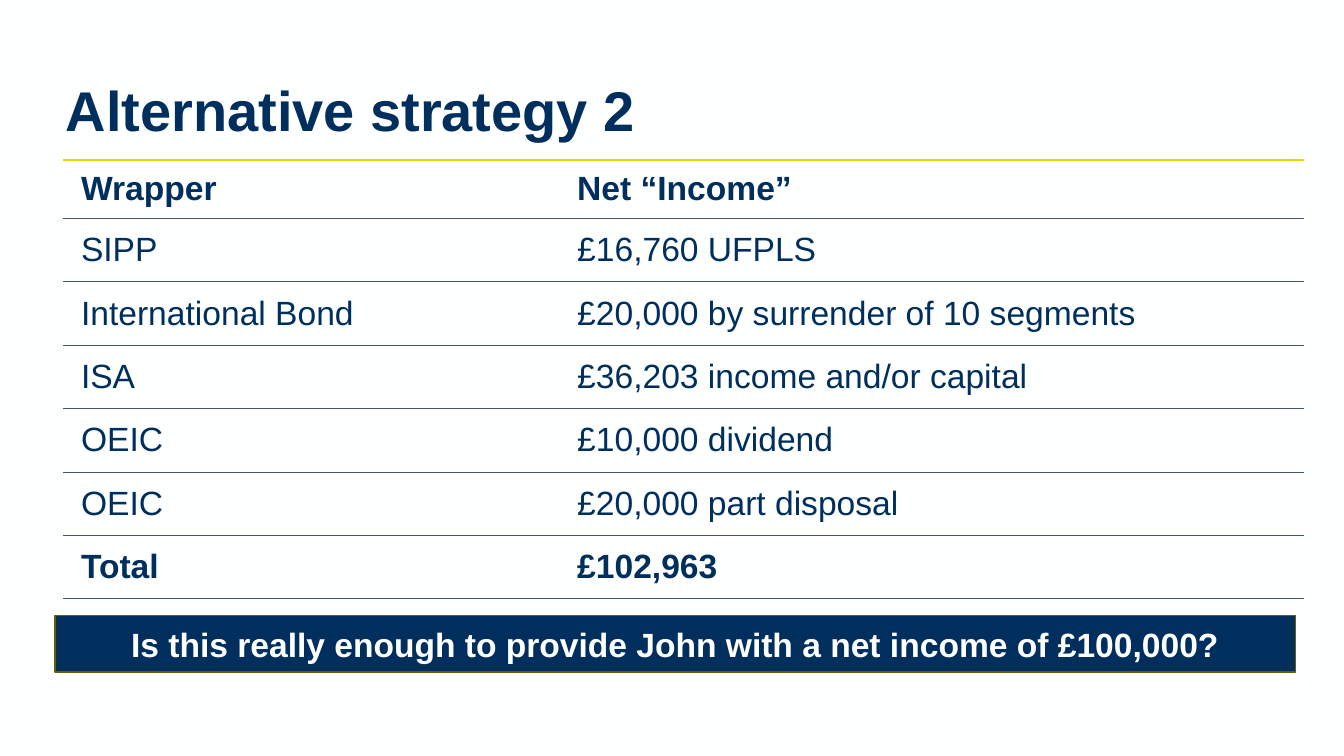
from lxml import etree
from pptx import Presentation
from pptx.dml.color import RGBColor
from pptx.enum.shapes import MSO_SHAPE
from pptx.enum.text import MSO_ANCHOR, PP_ALIGN
from pptx.oxml.ns import qn
from pptx.util import Inches, Pt

RECT = MSO_SHAPE.RECTANGLE
MIDDLE = MSO_ANCHOR.MIDDLE
LEFT, CENTER = PP_ALIGN.LEFT, PP_ALIGN.CENTER

NAVY, SLATE, YELLOW, OLIVE, WHITE = "002F5E", "44546A", "E8D600", "665E00", "FEFFFF"

# Grid: width in inches, row heights in points
CONTENT_W = 9.23
COLUMN_SHARES = (0.4, 0.6)
HEADER_H, ROW_H = 30, 34

ROWS = [
    ("Wrapper", "Net “Income”"),
    ("SIPP", "£16,760 UFPLS"),
    ("International Bond", "£20,000 by surrender of 10 segments"),
    ("ISA", "£36,203 income and/or capital"),
    ("OEIC", "£10,000 dividend"),
    ("OEIC", "£20,000 part disposal"),
    ("Total", "£102,963"),
]


def rgb(value):
    return RGBColor.from_string(value)


def set_text(tf, text, size=18, color=NAVY, bold=True, align=LEFT):
    tf.word_wrap = True
    p = tf.paragraphs[0]
    p.alignment = align
    r = p.add_run()
    r.text = text
    for name, value in {"name": "Arial", "size": Pt(size), "bold": bold}.items():
        setattr(r.font, name, value)
    r.font.color.rgb = rgb(color)
    return p


def set_border(cell, side, color=None, width=0):
    tc_pr = cell._tc.get_or_add_tcPr()
    ln = etree.SubElement(tc_pr, qn(f"a:ln{side}"), w=str(int(Pt(width))))
    if color is None:
        etree.SubElement(ln, qn("a:noFill"))
    else:
        fill = etree.SubElement(ln, qn("a:solidFill"))
        etree.SubElement(fill, qn("a:srgbClr"), val=color)


def add_title(s, text):
    sp = s.shapes.add_textbox(Inches(0.39), Inches(0.3), Inches(9.31), Inches(1.09))
    sp.text_frame.vertical_anchor = MIDDLE
    p = set_text(sp.text_frame, text, size=30)
    p.line_spacing = Pt(31)


def add_income_table(s, rows):
    last = len(rows) - 1
    height = HEADER_H + last * ROW_H
    table = s.shapes.add_table(len(rows), len(COLUMN_SHARES), Inches(0.47), Inches(1.19),
                               Inches(CONTENT_W), Pt(height)).table
    table.first_row = table.horz_banding = False
    for column, share in zip(table.columns, COLUMN_SHARES):
        column.width = Inches(CONTENT_W * share)

    cell_format = {"vertical_anchor": MIDDLE, "margin_left": Pt(9.6), "margin_right": Pt(9.6),
                   "margin_top": Pt(4.8), "margin_bottom": Pt(4.8)}
    for i, texts in enumerate(rows):
        table.rows[i].height = Pt(ROW_H if i else HEADER_H)
        top = (SLATE, 0.25) if i else (YELLOW, 1)
        bottom = (SLATE, 0.5 if i == last else 0.25)
        for j, text in enumerate(texts):
            cell = table.cell(i, j)
            for name, value in cell_format.items():
                setattr(cell, name, value)
            set_text(cell.text_frame, text, bold=i in (0, last))
            set_border(cell, "L")
            set_border(cell, "R")
            set_border(cell, "T", *top)
            set_border(cell, "B", *bottom)
            cell.fill.background()


def add_banner(s, text):
    sp = s.shapes.add_shape(RECT, Inches(0.41), Inches(4.58), Inches(CONTENT_W), Inches(0.42))
    sp.shadow.inherit = False
    sp.fill.solid()
    sp.fill.fore_color.rgb = rgb(NAVY)
    sp.line.color.rgb = rgb(OLIVE)
    sp.line.width = Pt(1)
    sp.text_frame.vertical_anchor = MIDDLE
    set_text(sp.text_frame, text, color=WHITE, align=CENTER)


def main():
    # Widescreen slide, 16:9
    prs = Presentation()
    prs.slide_width = Inches(10)
    prs.slide_height = prs.slide_width * 9 // 16
    s = prs.slides.add_slide(prs.slide_layouts[6])
    s.background.fill.solid()
    s.background.fill.fore_color.rgb = rgb(WHITE)

    # Heading, breakdown of income, closing question
    add_title(s, "Alternative strategy 2")
    add_income_table(s, ROWS)
    add_banner(s, "Is this really enough to provide John with a net income of £100,000?")

    prs.save("out.pptx")


if __name__ == "__main__":
    main()
